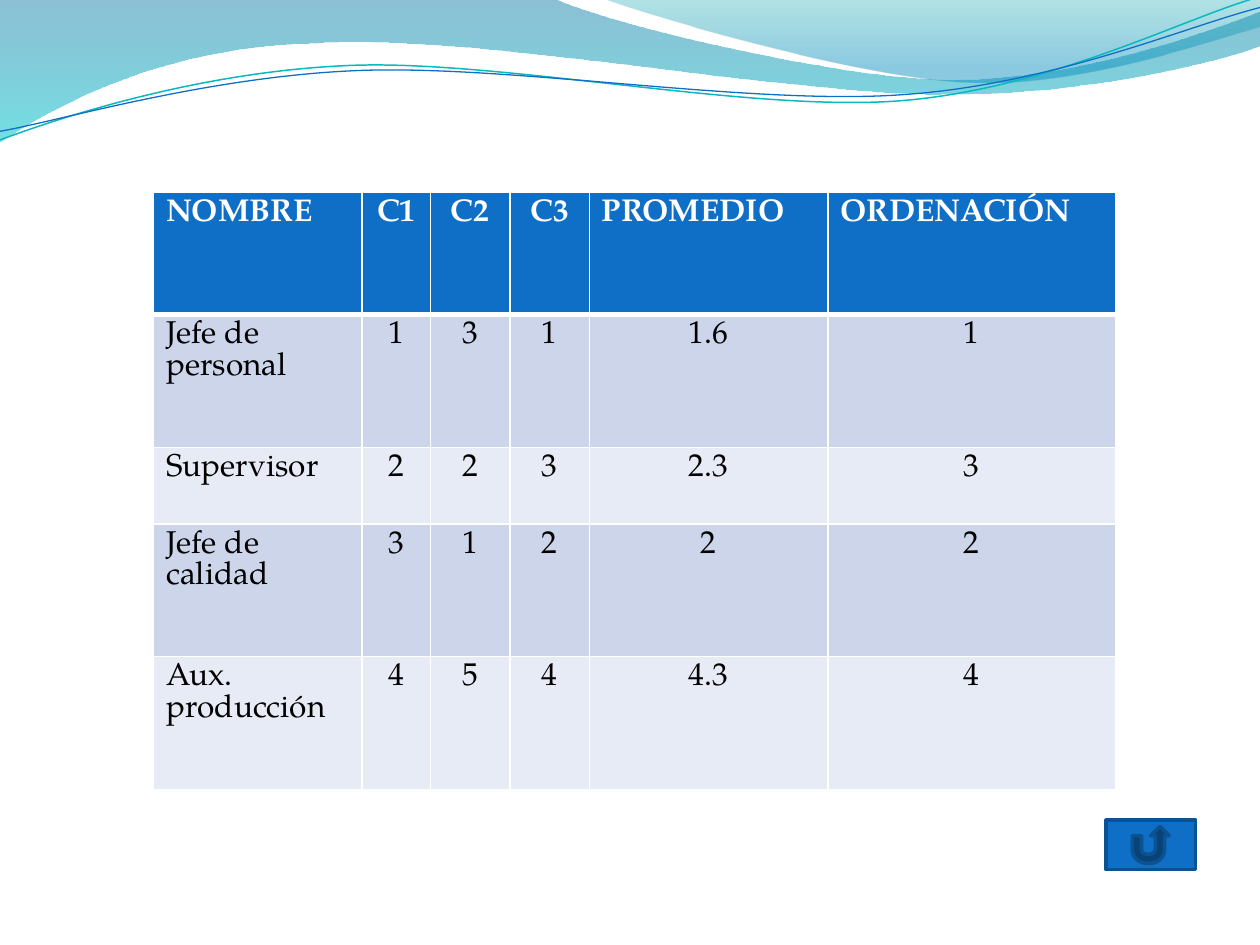
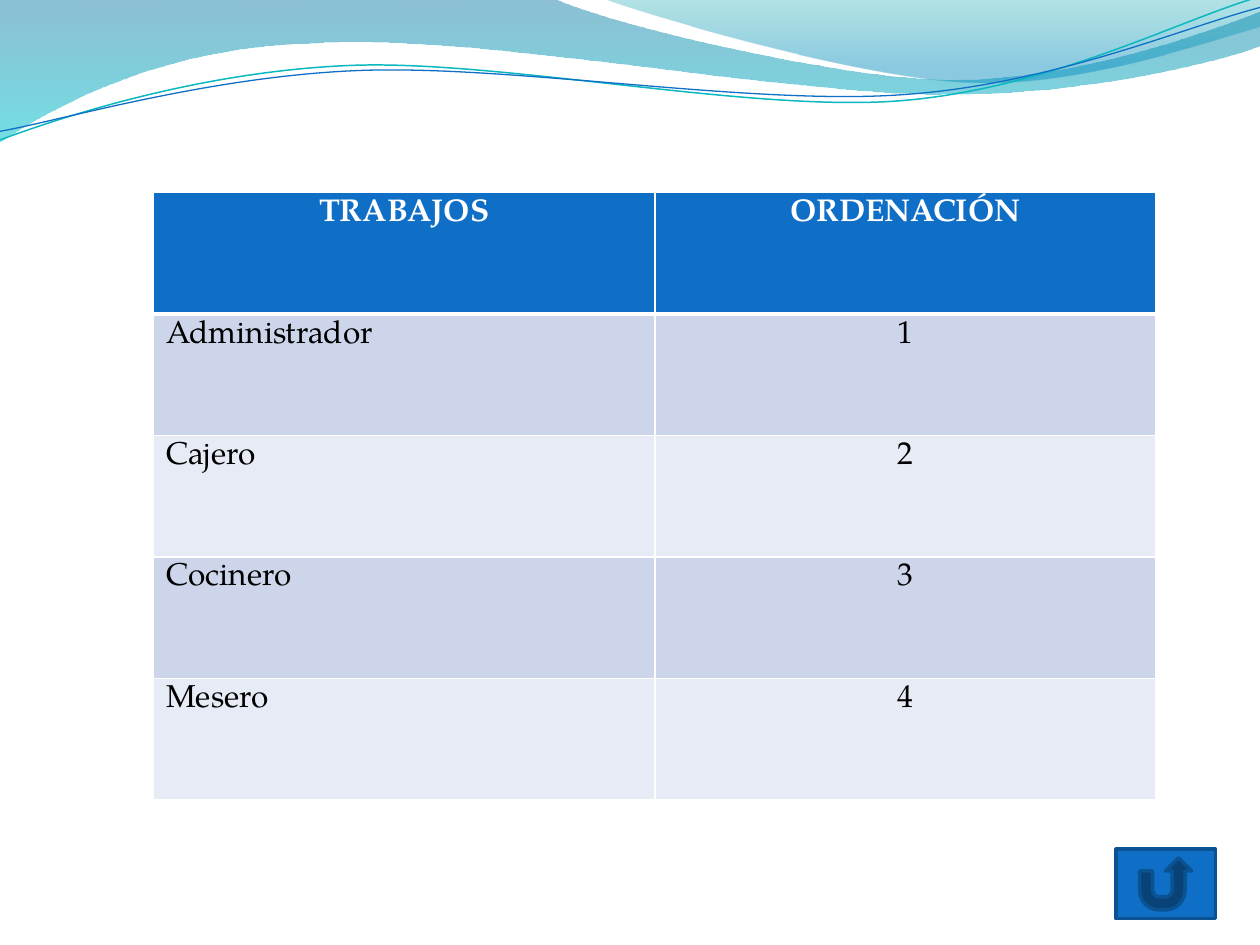
from dataclasses import dataclass

from lxml import etree
from pptx import Presentation
from pptx.dml.color import RGBColor
from pptx.enum.shapes import MSO_SHAPE
from pptx.enum.text import PP_ALIGN
from pptx.oxml.ns import qn
from pptx.util import Pt

LEFT, CENTER = PP_ALIGN.LEFT, PP_ALIGN.CENTER
RETURN_BUTTON = MSO_SHAPE.ACTION_BUTTON_RETURN

FONT = "TeX Gyre Pagella"
TEXT_SIZE = 18
WHITE = RGBColor(0xFF, 0xFF, 0xFF)
BLACK = RGBColor(0x00, 0x00, 0x00)
BLUE = RGBColor(0x0F, 0x6F, 0xC6)
DARK_BLUE = RGBColor(0x0B, 0x52, 0x92)
TEAL = RGBColor(0x0A, 0xB8, 0xBF)
BAND_TOP = RGBColor(0x00, 0x74, 0xA1)
BAND_BOTTOM = RGBColor(0x00, 0xC6, 0xCF)
VEIL_TOP = RGBColor(0x00, 0xA1, 0xA9)
VEIL_BOTTOM = RGBColor(0x00, 0x8B, 0xBF)
ROW_FILLS = (RGBColor(0xCC, 0xD5, 0xEA), RGBColor(0xE7, 0xEB, 0xF5))

TABLE_LEFT, TABLE_TOP = 87.8, 110
LINE_ROTATION = 357.3


@dataclass(frozen=True)
class GradientStop:
    color: RGBColor
    position: float
    opacity: int


@dataclass(frozen=True)
class Wave:
    start: tuple[float, float]
    segments: tuple[tuple[float, ...], ...]
    stops: tuple[GradientStop, ...] = ()
    line_color: RGBColor | None = None
    line_width: float = 0


@dataclass(frozen=True)
class Column:
    header: str
    width: float
    header_align: PP_ALIGN = CENTER


@dataclass(frozen=True)
class Button:
    left: float
    top: float
    width: float
    height: float


@dataclass(frozen=True)
class RankingPage:
    columns: tuple[Column, ...]
    row_heights: tuple[float, ...]
    rows: tuple[tuple[str, ...], ...]
    button: Button


WAVES = (
    Wave((0, 0), (
        (316.8, -0.7),
        (342.7, 12.2, 478.1, 45.4, 545.8, 45.4),
        (614.2, 45.4, 689.8, 18.7, 720, 6.5),
        (720.7, 25.9),
        (707.8, 31.7, 626.4, 54.7, 537.1, 54),
        (447.8, 54, 275, 20.2, 185, 24.5),
        (92.9, 25.9, 33.1, 59.8, -0.7, 81.4),
    ), stops=(GradientStop(BAND_TOP, 0, 45), GradientStop(BAND_BOTTOM, 1, 55))),
    Wave((344.9, -0.7), (
        (366.5, 7.9, 491, 44.6, 553.7, 46.8),
        (616.3, 49.7, 691.9, 23, 720, 15.1),
        (720, 0),
    ), stops=(GradientStop(VEIL_TOP, 0, 30), GradientStop(VEIL_BOTTOM, 0.8, 45))),
    Wave((-1.4, 63), (
        (33.8, 51.7, 114.1, 29.4, 199.8, 29.9),
        (284.9, 30.3, 425.8, 67.3, 512.4, 64.9),
        (599, 62.4, 676.5, 25.7, 720.2, 15.5),
    ), line_color=TEAL, line_width=0.85),
    Wave((-1.1, 58), (
        (32.9, 53.8, 118.3, 32.5, 204.1, 33),
        (290.6, 33.4, 428.9, 63.8, 515.5, 61.4),
        (601.4, 59.6, 678.4, 30.1, 721.4, 21.3),
    ), line_color=BLUE, line_width=0.75),
)

PAGES = (
    RankingPage(
        columns=(
            Column("NOMBRE", 119.1, LEFT),
            Column("C1", 39.1),
            Column("C2", 45.4),
            Column("C3", 45.4),
            Column("PROMEDIO", 136.3, LEFT),
            Column("ORDENACIÓN", 164.4, LEFT),
        ),
        row_heights=(69.8, 75.8, 43.9, 75.8, 75.8),
        rows=(
            ("Jefe de personal", "1", "3", "1", "1.6", "1"),
            ("Supervisor", "2", "2", "3", "2.3", "3"),
            ("Jefe de calidad", "3", "1", "2", "2", "2"),
            ("Aux. producción", "4", "5", "4", "4.3", "4"),
        ),
        button=Button(632, 468.7, 51.1, 28.1),
    ),
    RankingPage(
        columns=(Column("TRABAJOS", 286.4), Column("ORDENACIÓN", 286.4)),
        row_heights=(69.4,) * 5,
        rows=(
            ("Administrador", "1"),
            ("Cajero", "2"),
            ("Cocinero", "3"),
            ("Mesero", "4"),
        ),
        button=Button(637.6, 485.3, 56.9, 39.6),
    ),
)


def fill_gradient(shape, stops: tuple[GradientStop, ...]) -> None:
    shape.fill.gradient()
    shape.fill.gradient_angle = 270
    for target, stop in zip(shape.fill.gradient_stops, stops):
        target.position = stop.position
        target.color.rgb = stop.color
    for color, stop in zip(shape.element.iter(qn("a:srgbClr")), stops):
        etree.SubElement(color, qn("a:alpha"), val=str(stop.opacity * 1000))


def bend_segments(shape, segments: tuple[tuple[float, ...], ...]) -> None:
    lines = list(shape.element.iter(qn("a:lnTo")))
    for line, segment in zip(lines, segments):
        if len(segment) == 2:
            continue
        curve = etree.Element(qn("a:cubicBezTo"))
        for x, y in zip(segment[0::2], segment[1::2]):
            etree.SubElement(
                curve, qn("a:pt"), x=str(Pt(x) - shape.left), y=str(Pt(y) - shape.top)
            )
        line.getparent().replace(line, curve)


def draw_wave(page, wave: Wave):
    builder = page.shapes.build_freeform(Pt(wave.start[0]), Pt(wave.start[1]))
    ends = [(Pt(segment[-2]), Pt(segment[-1])) for segment in wave.segments]
    builder.add_line_segments(ends, close=bool(wave.stops))
    shape = builder.convert_to_shape()
    bend_segments(shape, wave.segments)
    shape.shadow.inherit = False
    if wave.stops:
        fill_gradient(shape, wave.stops)
        shape.line.fill.background()
    else:
        shape.rotation = LINE_ROTATION
        shape.fill.background()
        shape.line.color.rgb = wave.line_color
        shape.line.width = Pt(wave.line_width)
    return shape


def decorate_master(master, page) -> None:
    for wave in WAVES:
        master.shapes.element.append(draw_wave(page, wave).element)


def set_borders(cell, widths: dict[str, float]) -> None:
    properties = cell._tc.get_or_add_tcPr()
    for index, (side, width) in enumerate(widths.items()):
        border = etree.Element(qn(f"a:ln{side}"), w=str(Pt(width)))
        solid = etree.SubElement(border, qn("a:solidFill"))
        etree.SubElement(solid, qn("a:srgbClr"), val=str(WHITE))
        properties.insert(index, border)


def write_cell(cell, text: str, align: PP_ALIGN, row_index: int) -> None:
    is_header = row_index == 0
    cell.fill.solid()
    cell.fill.fore_color.rgb = BLUE if is_header else ROW_FILLS[(row_index - 1) % 2]
    set_borders(cell, {
        "L": 1,
        "R": 1,
        "T": 3 if row_index == 1 else 1,
        "B": 3 if is_header else 1,
    })
    para = cell.text_frame.paragraphs[0]
    para.alignment = align
    span = para.add_run()
    span.text = text
    span.font.name = FONT
    span.font.size = Pt(TEXT_SIZE)
    span.font.bold = is_header
    span.font.color.rgb = WHITE if is_header else BLACK


def draw_table(page, ranking: RankingPage) -> None:
    columns = ranking.columns
    table = page.shapes.add_table(
        len(ranking.row_heights), len(columns),
        Pt(TABLE_LEFT), Pt(TABLE_TOP),
        Pt(sum(column.width for column in columns)), Pt(sum(ranking.row_heights)),
    ).table
    for row, height in zip(table.rows, ranking.row_heights):
        row.height = Pt(height)
    for column_index, column in enumerate(columns):
        table.columns[column_index].width = Pt(column.width)
        write_cell(table.cell(0, column_index), column.header, column.header_align, 0)
        align = LEFT if column_index == 0 else CENTER
        for row_index, values in enumerate(ranking.rows, start=1):
            write_cell(table.cell(row_index, column_index), values[column_index], align, row_index)


def draw_button(page, button: Button) -> None:
    shape = page.shapes.add_shape(
        RETURN_BUTTON, Pt(button.left), Pt(button.top), Pt(button.width), Pt(button.height)
    )
    shape.shadow.inherit = False
    shape.fill.solid()
    shape.fill.fore_color.rgb = BLUE
    shape.line.color.rgb = DARK_BLUE
    shape.line.width = Pt(2)


def main() -> None:
    deck = Presentation()
    deck.slide_width, deck.slide_height = Pt(720), Pt(540)
    layout = deck.slide_layouts[6]
    for index, ranking in enumerate(PAGES):
        page = deck.slides.add_slide(layout)
        if index == 0:
            decorate_master(deck.slide_master, page)
        draw_table(page, ranking)
        draw_button(page, ranking.button)
    deck.save("out.pptx")


if __name__ == "__main__":
    main()
